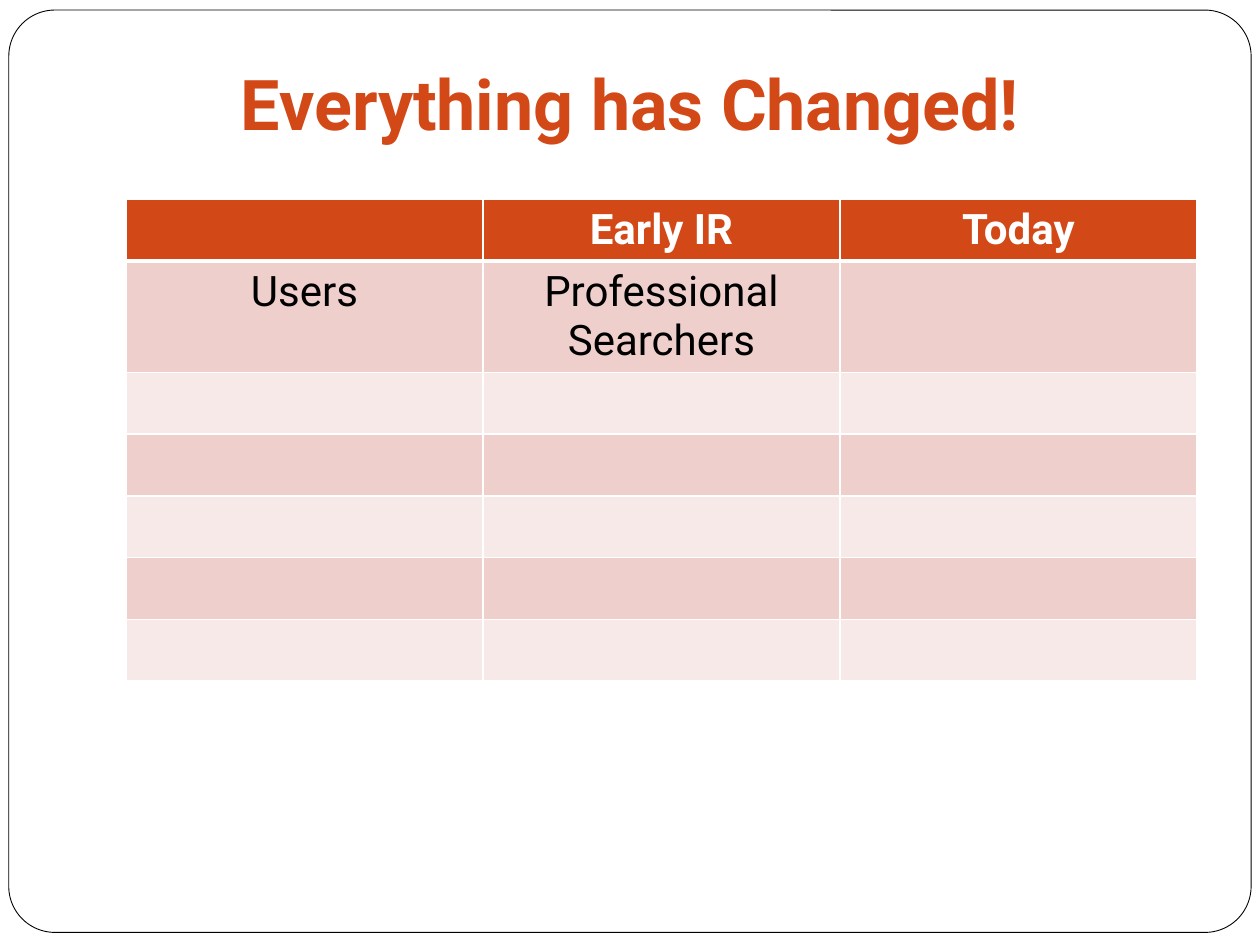
from dataclasses import dataclass

from lxml.etree import SubElement
from pptx import Presentation
from pptx.dml.color import RGBColor as Color
from pptx.enum.shapes import MSO_SHAPE as Shape
from pptx.enum.text import MSO_ANCHOR as Anchor, PP_ALIGN as Align
from pptx.oxml.ns import qn
from pptx.util import Inches, Pt


@dataclass(frozen=True)
class Theme:
    font: str = "Roboto"
    accent: str = "D34817"
    white: str = "FFFFFF"
    black: str = "000000"
    bands: tuple = ("EFCFCC", "F7E9E8")
    title_size: int = 40
    table_size: int = 24
    grid_width: int = 1
    header_rule_width: int = 3


def write_text(text_frame, text, *, font, size, color, bold=False):
    """Put one centred, formatted run in a text frame."""
    paragraph = text_frame.paragraphs[0]
    paragraph.alignment = Align.CENTER
    run = paragraph.add_run()
    run.text = text
    run.font.name = font
    run.font.size = Pt(size)
    run.font.bold = bold
    run.font.color.rgb = Color.from_string(color)


def set_border(cell, side, color, width):
    """Draw one side (L, R, T or B) of a cell."""
    properties = cell._tc.get_or_add_tcPr()
    line = SubElement(properties, qn(f"a:ln{side}"), w=str(Pt(width)))
    fill = SubElement(line, qn("a:solidFill"))
    SubElement(fill, qn("a:srgbClr"), val=color)


class SlideBuilder:
    def __init__(self, slide, theme):
        self.slide = slide
        self.theme = theme

    def add_frame(self, left, top, width, height):
        theme = self.theme
        frame = self.slide.shapes.add_shape(
            Shape.ROUNDED_RECTANGLE, left, top, width, height)
        frame.adjustments[0] = 0.05
        frame.shadow.inherit = False
        frame.fill.solid()
        frame.fill.fore_color.rgb = Color.from_string(theme.white)
        frame.line.color.rgb = Color.from_string(theme.black)
        frame.line.width = Pt(0.5)
        # Send the frame behind the title
        self.slide.shapes._spTree.insert(2, frame._element)

    def add_title(self, text, left, top, width, height):
        theme = self.theme
        title = self.slide.shapes.title
        title.left, title.top, title.width, title.height = left, top, width, height
        text_frame = title.text_frame
        text_frame.vertical_anchor = Anchor.BOTTOM
        text_frame.margin_bottom = Inches(0.1)
        write_text(text_frame, text, font=theme.font, size=theme.title_size,
                   color=theme.accent, bold=True)

    def add_table(self, rows, heights, left, top, width):
        table = self.slide.shapes.add_table(
            len(rows), len(rows[0]), left, top, width, sum(heights)).table
        table.first_row = table.horz_banding = False
        for row_index, (texts, height) in enumerate(zip(rows, heights)):
            table.rows[row_index].height = height
            for column_index, text in enumerate(texts):
                self.format_cell(table.cell(row_index, column_index), text, row_index)

    def format_cell(self, cell, text, row_index):
        theme = self.theme
        is_header = row_index == 0
        # The heavy rule lies between the header and the first body row
        rule_side = {0: "B", 1: "T"}.get(row_index)
        for side in "LRTB":
            width = theme.header_rule_width if side == rule_side else theme.grid_width
            set_border(cell, side, theme.white, width)
        fill = theme.accent if is_header else theme.bands[(row_index - 1) % 2]
        cell.fill.solid()
        cell.fill.fore_color.rgb = Color.from_string(fill)
        if text:
            write_text(cell.text_frame, text, font=theme.font, size=theme.table_size,
                       color=theme.white if is_header else theme.black, bold=is_header)


def main():
    presentation = Presentation()
    presentation.slide_width, presentation.slide_height = Inches(10), Inches(7.5)
    title_only = presentation.slide_layouts[5]
    builder = SlideBuilder(presentation.slides.add_slide(title_only), Theme())

    # Page frame and title
    builder.add_frame(Inches(0.07), Inches(0.08), Inches(9.86), Inches(7.32))
    builder.add_title("Everything has Changed!",
                      Inches(0.75), Inches(0), Inches(8.5), Inches(1.25))

    # Comparison table, with five rows left open
    rows = [("", "Early IR", "Today"),
            ("Users", "Professional Searchers", "")] + [("", "", "")] * 5
    heights = [Inches(0.49), Inches(0.88)] + [Inches(0.49)] * 5
    builder.add_table(rows, heights, Inches(1), Inches(1.58), Inches(8.5))

    presentation.save("out.pptx")


if __name__ == "__main__":
    main()
